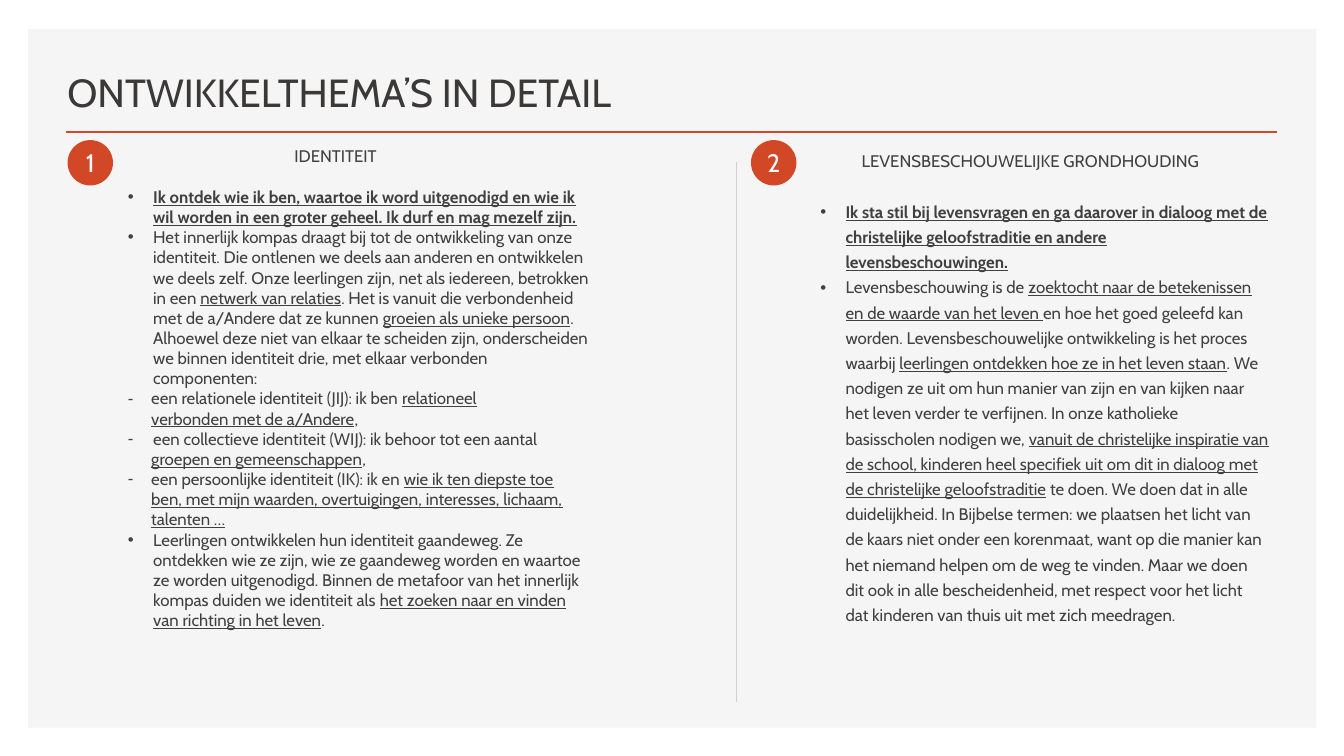
import pptx
import pptx.util
import pptx.dml.color
import pptx.enum.shapes
import pptx.enum.text
import pptx.oxml.ns
import lxml.etree
import dataclasses

Pt = pptx.util.Pt
Shape = pptx.enum.shapes.MSO_SHAPE
Align = pptx.enum.text.PP_ALIGN
Anchor = pptx.enum.text.MSO_ANCHOR
qn = pptx.oxml.ns.qn


@dataclasses.dataclass
class Theme:
    font: str = "Cabin"
    panel: str = "F5F5F5"
    accent: str = "D24726"
    rule: str = "D0CECE"
    title: str = "3B3838"
    text: str = "404040"
    white: str = "FFFFFF"
    big: int = 28
    mid: int = 18
    small: int = 12


def color(code):
    return pptx.dml.color.RGBColor.from_string(code)


class Page:
    def __init__(self, deck, theme):
        self.theme = theme
        self.slide = deck.slides.add_slide(deck.slide_layouts[6])
        self.col = deck.slide_width / 100
        self.row = deck.slide_height / 100

    def place(self, x, y, w, h):
        return [round(v) for v in (x * self.col, y * self.row, w * self.col, h * self.row)]

    def shape(self, kind, box, fill):
        item = self.slide.shapes.add_shape(kind, *self.place(*box))
        item.shadow.inherit = False
        item.fill.solid()
        item.fill.fore_color.rgb = color(fill)
        item.line.fill.background()
        return item

    def line(self, start, end, tint, width):
        item = self.slide.shapes.add_connector(
            pptx.enum.shapes.MSO_CONNECTOR.STRAIGHT, *self.place(*start, *end))
        item.line.color.rgb = color(tint)
        item.line.width = Pt(width)
        lxml.etree.SubElement(item._element.spPr, qn("a:effectLst"))

    def run(self, para, text, size, tint, style=""):
        item = para.add_run()
        item.text = text
        font = item.font
        font.name = self.theme.font
        font.size = Pt(size)
        font.color.rgb = color(tint)
        font.bold = "b" in style
        font.underline = "u" in style

    def frame(self, box, anchor=Anchor.TOP):
        frame = self.slide.shapes.add_textbox(*self.place(*box)).text_frame
        frame.word_wrap = True
        frame.vertical_anchor = anchor
        return frame

    def title(self, box, text):
        para = self.frame(box, Anchor.BOTTOM).paragraphs[0]
        self.run(para, text, self.theme.big, self.theme.title)

    def badge(self, box, text):
        frame = self.shape(Shape.OVAL, box, self.theme.accent).text_frame
        frame.margin_left = frame.margin_right = 0
        frame.margin_top = frame.margin_bottom = 0
        frame.vertical_anchor = Anchor.MIDDLE
        para = frame.paragraphs[0]
        para.alignment = Align.CENTER
        self.run(para, text, self.theme.mid, self.theme.white)

    def indent(self, para, left, mark):
        props = para._p.get_or_add_pPr()
        props.set("marL", str(round(left * self.col)))
        if mark:
            props.set("indent", str(-round(left * self.col)))
            lxml.etree.SubElement(props, qn("a:buFont")).set("typeface", "Arial")
            lxml.etree.SubElement(props, qn("a:buChar")).set("char", mark)

    def body(self, box, head, shift, rows, gap, pitch=None):
        frame = self.frame(box)
        lines = [(shift, "", [(head, "")])] + rows
        for i, (left, mark, runs) in enumerate(lines):
            para = frame.add_paragraph() if i else frame.paragraphs[0]
            if pitch:
                para.line_spacing = Pt(pitch)
            if not i:
                para.space_after = Pt(gap)
            self.indent(para, left, mark)
            for text, style in runs:
                self.run(para, text, self.theme.small, self.theme.text, style)


WIDE = 1.88
SLIM = 1.73

SELF = [
    (WIDE, "•", [("Ik ontdek wie ik ben, waartoe ik word uitgenodigd en wie ik wil worden in een groter geheel. Ik durf en mag mezelf zijn.", "bu")]),
    (WIDE, "•", [
        ("Het innerlijk kompas draagt bij tot de ontwikkeling van onze identiteit. Die ontlenen we deels aan anderen en ontwikkelen we deels zelf. Onze leerlingen zijn, net als iedereen, betrokken in een ", ""),
        ("netwerk van relaties", "u"),
        (". Het is vanuit die verbondenheid met de a/Andere dat ze kunnen ", ""),
        ("groeien als unieke persoon", "u"),
        (". Alhoewel deze niet van elkaar te scheiden zijn, onderscheiden we binnen identiteit drie, met elkaar verbonden componenten:", "")]),
    (SLIM, "-", [("een relationele identiteit (JIJ): ik ben ", ""), ("relationeel", "u")]),
    (SLIM, "", [("verbonden met de a/Andere", "u"), (",", "")]),
    (WIDE, "-", [("een collectieve identiteit (WIJ): ik behoor tot een aantal", "")]),
    (SLIM, "", [("groepen en gemeenschappen", "u"), (",", "")]),
    (SLIM, "-", [("een persoonlijke identiteit (IK): ik en ", ""), ("wie ik ten diepste toe", "u")]),
    (SLIM, "", [("ben, met mijn waarden, overtuigingen, interesses, lichaam,", "u")]),
    (SLIM, "", [("talenten …", "u")]),
    (WIDE, "•", [
        ("Leerlingen ontwikkelen hun identiteit gaandeweg. Ze  ontdekken wie ze zijn, wie ze gaandeweg worden en waartoe ze worden uitgenodigd. Binnen de metafoor van het innerlijk kompas duiden we identiteit als ", ""),
        ("het zoeken naar en vinden van richting in het leven", "u"),
        (".", "")]),
]

FAITH = [
    (WIDE, "•", [("Ik sta stil bij levensvragen en ga daarover in dialoog met de christelijke geloofstraditie en andere levensbeschouwingen.", "bu")]),
    (WIDE, "•", [
        ("Levensbeschouwing is de ", ""),
        ("zoektocht naar de betekenissen en de waarde van het leven ", "u"),
        ("en hoe het goed geleefd kan worden. Levensbeschouwelijke ontwikkeling is het proces waarbij ", ""),
        ("leerlingen ontdekken hoe ze in het leven staan", "u"),
        (". We nodigen ze uit om hun manier van zijn en van kijken naar het leven verder te verfijnen. In onze katholieke basisscholen nodigen we, ", ""),
        ("vanuit de christelijke inspiratie van de school, kinderen heel specifiek uit om dit in dialoog met de christelijke geloofstraditie", "u"),
        (" te doen. We doen dat in alle duidelijkheid. In Bijbelse termen: we plaatsen het licht van de kaars niet onder een korenmaat, want op die manier kan het niemand helpen om de weg te vinden. Maar we doen dit ook in alle bescheidenheid, met respect voor het licht dat kinderen van thuis uit met zich meedragen.", "")]),
]


def main():
    deck = pptx.Presentation()
    deck.slide_width = pptx.util.Inches(13.33)
    deck.slide_height = pptx.util.Inches(7.5)
    theme = Theme()
    page = Page(deck, theme)
    page.shape(Shape.RECTANGLE, (2.1, 3.87, 95.85, 92.4), theme.panel)
    page.line((4.95, 17.47), (95.05, 17.47), theme.accent, 2)
    page.title((4.28, 6.53, 56.4, 9.33), "ONTWIKKELTHEMA’S IN DETAIL")
    for x, mark in ((5.03, "1"), (55.88, "2")):
        page.badge((x, 18.53, 3.38, 6), mark)
    page.body((8.78, 18.67, 36, 13.33), "IDENTITEIT", 12.38, SELF, 14.5)
    page.body((60.3, 18.67, 34.88, 21.2), "LEVENSBESCHOUWELIJKE GRONDHOUDING", 3.08, FAITH, 18, 18)
    page.line((54.83, 21.47), (54.83, 92.8), theme.rule, 0.75)
    deck.save("out.pptx")


if __name__ == "__main__":
    main()
